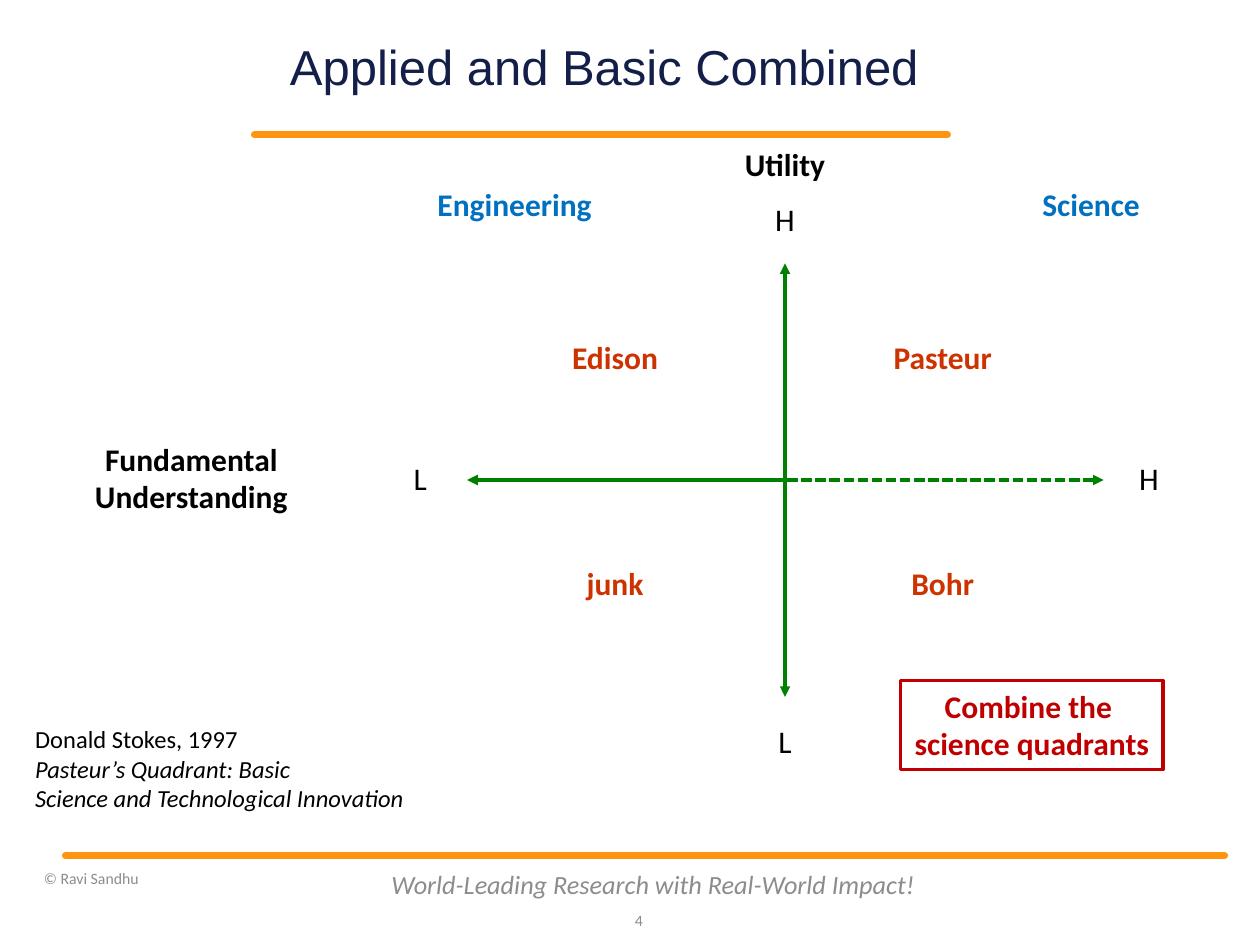
from dataclasses import dataclass

import lxml.etree
import pptx
import pptx.dml.color
import pptx.enum.dml
import pptx.enum.shapes
import pptx.enum.text
import pptx.oxml.ns
import pptx.util

Pt = pptx.util.Pt
Align = pptx.enum.text.PP_ALIGN
Anchor = pptx.enum.text.MSO_ANCHOR


@dataclass(frozen=True)
class Theme:
    navy: str = "131F49"
    orange: str = "FF950E"
    grey: str = "8C8C8C"
    black: str = "000000"
    green: str = "008000"
    rust: str = "CC3300"
    blue: str = "0070C0"
    red: str = "C00000"
    heading_font: str = "Arial"
    body_font: str = "Calibri"
    title: float = 28
    label: float = 18
    motto: float = 15
    source: float = 14
    footer: float = 9


THEME = Theme()


@dataclass(frozen=True)
class Label:
    text: str
    center_x: float
    center_y: float
    width: float
    color: str = THEME.black
    bold: bool = True
    height: float = 28.8


@dataclass(frozen=True)
class Rule:
    start: tuple[float, float]
    end: tuple[float, float]
    color: str
    width: float
    heads: tuple[str, ...] = ()
    dashed: bool = False
    rounded: bool = False


def rgb(color: str) -> pptx.dml.color.RGBColor:
    return pptx.dml.color.RGBColor.from_string(color)


def write(shape, text: str, size: float, color: str, align=Align.LEFT, anchor=Anchor.TOP,
          font: str = THEME.body_font, bold: bool = False, italic_from: int = 99,
          wrap: bool = False) -> None:
    frame = shape.text_frame
    frame.text = text
    frame.word_wrap = wrap
    frame.vertical_anchor = anchor
    for index, paragraph in enumerate(frame.paragraphs):
        paragraph.alignment = align
        paragraph.font.name = font
        paragraph.font.size = Pt(size)
        paragraph.font.bold = bold
        paragraph.font.italic = index >= italic_from
        paragraph.font.color.rgb = rgb(color)


def add_box(slide, left: float, top: float, width: float, height: float):
    return slide.shapes.add_textbox(Pt(left), Pt(top), Pt(width), Pt(height))


def add_label(slide, label: Label) -> None:
    box = add_box(slide, label.center_x - label.width / 2, label.center_y - label.height / 2,
                  label.width, label.height)
    write(box, label.text, THEME.label, label.color, Align.CENTER, bold=label.bold)


def add_rule(slide, rule: Rule) -> None:
    connector = slide.shapes.add_connector(
        pptx.enum.shapes.MSO_CONNECTOR.STRAIGHT, *map(Pt, rule.start + rule.end))
    connector.line.color.rgb = rgb(rule.color)
    connector.line.width = Pt(rule.width)
    if rule.dashed:
        connector.line.dash_style = pptx.enum.dml.MSO_LINE.SQUARE_DOT
    outline = connector.line._get_or_add_ln()
    if rule.rounded:
        outline.set("cap", "rnd")
    for head in rule.heads:
        lxml.etree.SubElement(outline, pptx.oxml.ns.qn(f"a:{head}"), type="triangle")
    lxml.etree.SubElement(connector._element.spPr, pptx.oxml.ns.qn("a:effectLst"))


def add_callout(slide) -> None:
    callout = slide.shapes.add_shape(pptx.enum.shapes.MSO_SHAPE.RECTANGLE,
                                     Pt(514.8), Pt(388.8), Pt(149.8), Pt(51.1))
    callout.shadow.inherit = False
    callout.fill.background()
    callout.line.color.rgb = rgb(THEME.red)
    callout.line.width = Pt(1.75)
    write(callout, "Combine the \nscience quadrants", THEME.label, THEME.red,
          Align.CENTER, bold=True)


def add_title(slide) -> None:
    title = add_box(slide, 156.2, 21.6, 378, 36.7)
    write(title, "Applied and Basic Combined", THEME.title, THEME.navy, Align.CENTER,
          Anchor.MIDDLE, font=THEME.heading_font, wrap=True)
    frame = title.text_frame
    frame.margin_left = frame.margin_right = frame.margin_top = frame.margin_bottom = 0
    frame.paragraphs[0].line_spacing = 0.9


def add_footer(slide) -> None:
    motto = add_box(slide, 216, 491, 314.6, 28.8)
    write(motto, "World-Leading Research with Real-World Impact!", THEME.motto, THEME.grey,
          Align.CENTER, Anchor.MIDDLE, italic_from=0, wrap=True)
    page = add_box(slide, 345.6, 511.2, 28.8, 28.8)
    write(page, "4", THEME.footer, THEME.grey, Align.RIGHT, Anchor.MIDDLE, wrap=True)
    copyright_line = add_box(slide, 18, 488.9, 198, 25.9)
    write(copyright_line, "© Ravi Sandhu", THEME.footer, THEME.grey,
          anchor=Anchor.MIDDLE, wrap=True)


def main() -> None:
    deck = pptx.Presentation()
    deck.slide_width, deck.slide_height = Pt(720), Pt(540)
    slide = deck.slides.add_slide(deck.slide_layouts[6])

    axis_x, axis_y = 448.6, 274.3
    left_x, right_x = 351.5, 538.7
    upper_y, lower_y = 203.8, 333.4
    field_y = 116.6
    low_end, high_end = 267.1, 630.7
    both_heads = ("headEnd", "tailEnd")

    rules = (
        Rule((145.4, 77), (541.4, 77), THEME.orange, 4, rounded=True),
        Rule((37.4, 488.9), (699.8, 488.9), THEME.orange, 4, rounded=True),
        Rule((low_end, axis_y), (high_end, axis_y), THEME.green, 2, both_heads, dashed=True),
        Rule((axis_x, 150.5), (axis_x, 398.2), THEME.green, 2, both_heads),
        Rule((low_end, axis_y), (axis_x, axis_y), THEME.green, 2, ("headEnd",)),
    )
    labels = (
        Label("Fundamental\nUnderstanding", 109.4, 273.2, 125.3, height=51.1),
        Label("L", 240.1, 273, 22.3, bold=False),
        Label("H", 656.6, 273, 25.9, bold=False),
        Label("H", axis_x, 125.3, 25.9, bold=False),
        Label("L", axis_x, 423.4, 22.3, bold=False),
        Label("Utility", axis_x, 93.6, 61.2),
        Label("Edison", left_x, upper_y, 64.1, THEME.rust),
        Label("Pasteur", right_x, upper_y, 71.3, THEME.rust),
        Label("junk", left_x, lower_y, 47.5, THEME.rust),
        Label("Bohr", right_x, lower_y, 50.4, THEME.rust),
        Label("Engineering", 294.1, field_y, 103, THEME.blue),
        Label("Science", 623.5, field_y, 70.6, THEME.blue),
    )

    add_title(slide)
    add_footer(slide)
    for rule in rules:
        add_rule(slide, rule)
    for label in labels:
        add_label(slide, label)
    citation = add_box(slide, 13, 410.4, 227.5, 58.3)
    write(citation, "Donald Stokes, 1997\nPasteur’s Quadrant: Basic\n"
          "Science and Technological Innovation", THEME.source, THEME.black, italic_from=1)
    add_callout(slide)
    deck.save("out.pptx")


if __name__ == "__main__":
    main()
